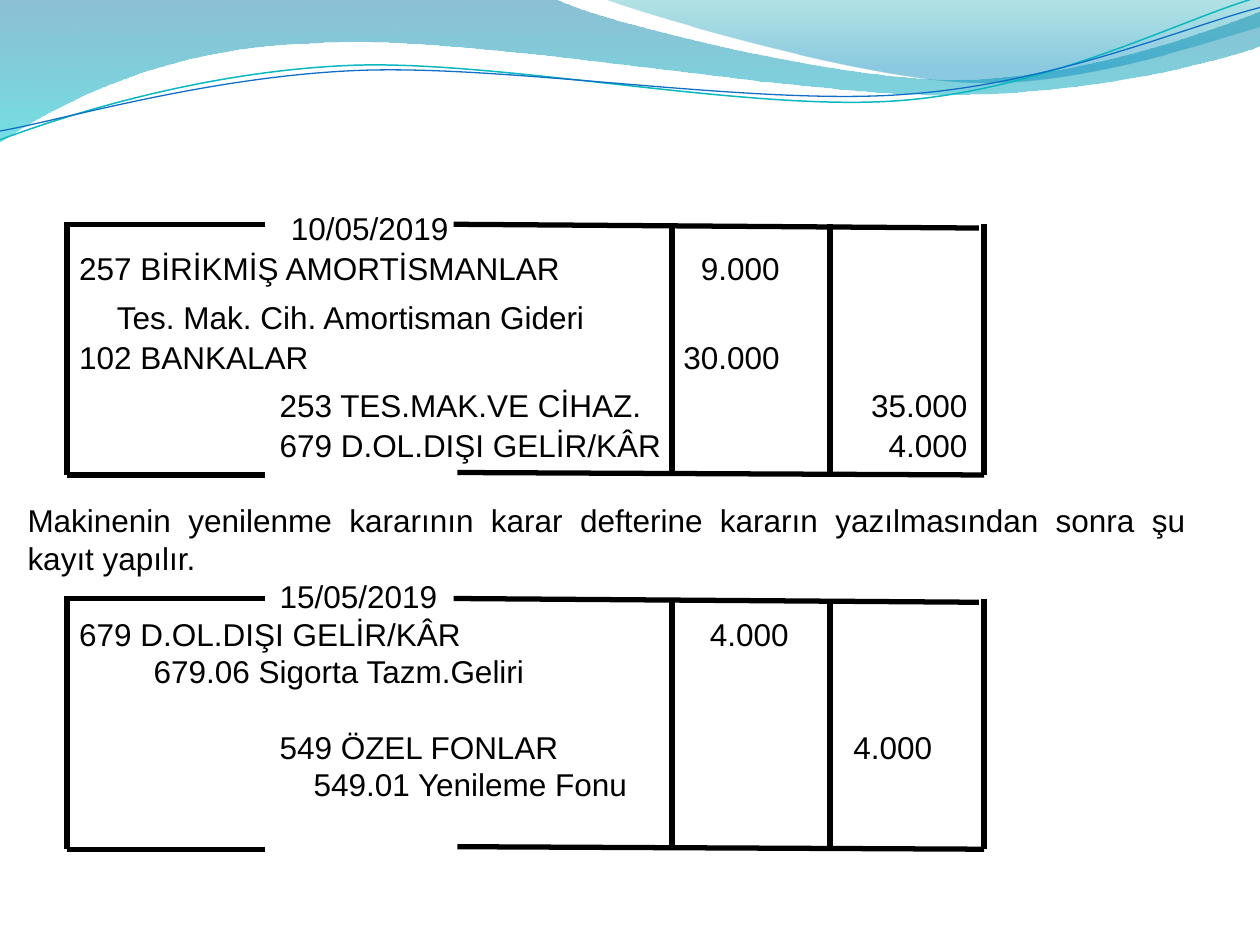
from lxml import etree
from pptx import Presentation
from pptx.dml.color import RGBColor
from pptx.enum.shapes import MSO_CONNECTOR
from pptx.enum.text import MSO_ANCHOR, PP_ALIGN
from pptx.oxml.ns import qn
from pptx.util import Inches, Pt

STRAIGHT = MSO_CONNECTOR.STRAIGHT
TOP = MSO_ANCHOR.TOP
LEFT, JUSTIFY = PP_ALIGN.LEFT, PP_ALIGN.JUSTIFY

BLACK = RGBColor(0x00, 0x00, 0x00)
DEEP_BLUE = RGBColor(0x00, 0x74, 0xA1)
CYAN = RGBColor(0x00, 0xC6, 0xCF)
TEAL = RGBColor(0x00, 0xA1, 0xA9)
SKY = RGBColor(0x00, 0x8B, 0xBF)
AQUA_LINE = RGBColor(0x0A, 0xB8, 0xBF)
BLUE_LINE = RGBColor(0x0F, 0x6F, 0xC6)

BROAD_WAVE = [
    (0, 0), (4.4, -0.01),
    (4.76, 0.17, 6.64, 0.63, 7.58, 0.63), (8.53, 0.63, 9.58, 0.26, 10, 0.09),
    (10.01, 0.36),
    (9.83, 0.44, 8.7, 0.76, 7.46, 0.75), (6.22, 0.75, 3.82, 0.28, 2.57, 0.34),
    (1.29, 0.36, 0.46, 0.83, -0.01, 1.13),
]
RIGHT_WAVE = [
    (4.79, -0.01),
    (5.09, 0.11, 6.82, 0.62, 7.69, 0.65), (8.56, 0.69, 9.61, 0.32, 10, 0.21),
    (10, 0),
]
AQUA_CURVE = [
    (0, 1.11),
    (0.48, 0.93, 1.58, 0.57, 2.77, 0.52), (3.95, 0.47, 5.93, 0.89, 7.13, 0.8),
    (8.33, 0.71, 9.38, 0.15, 9.98, -0.02),
]
BLUE_CURVE = [
    (0, 1.04),
    (0.47, 0.96, 1.64, 0.61, 2.83, 0.56), (4.03, 0.51, 5.97, 0.84, 7.17, 0.75),
    (8.36, 0.67, 9.41, 0.21, 10, 0.06),
]

JOURNAL_TOPS = (1.78, 4.75)
JOURNAL_LINES = [
    (0.51, 0, 2.1, 0, 3), (3.6, 0, 7.77, 0.03, 3),
    (0.53, 1.99, 2.1, 1.99, 3), (3.63, 1.97, 7.81, 1.99, 3),
] + [(x, 0, x, 1.99, 3.5) for x in (5.33, 6.59, 7.81, 0.53)]

ACCOUNT, CREDIT = 0.41, 2.0
ENTRIES = [
    ("10/05/2019", 2.09, None, None, 0),
    ("257 BİRİKMİŞ AMORTİSMANLAR", ACCOUNT, "9.000", 5.97, 1.4),
    ("Tes. Mak. Cih. Amortisman Gideri", 0.71, None, None, 6.5),
    ("102 BANKALAR", ACCOUNT, "30.000", 5.97, 1.4),
    ("253 TES.MAK.VE CİHAZ.", CREDIT, "35.000", 7.46, 6),
    ("679 D.OL.DIŞI GELİR/KÂR", CREDIT, "4.000", 7.46, 1.4),
    ("Makinenin yenilenme kararının karar defterine kararın yazılmasından "
     "sonra şu kayıt yapılır.", 0, None, None, 21.5),
    ("15/05/2019", CREDIT, None, None, 0),
    ("679 D.OL.DIŞI GELİR/KÂR", ACCOUNT, "4.000", 6.04, 0.4),
    ("679.06 Sigorta Tazm.Geliri", 1.0, None, None, 0),
    ("549 ÖZEL FONLAR", CREDIT, "4.000", 7.18, 21.5),
    ("549.01 Yenileme Fonu", 2.27, None, None, 0),
]


def add_outline(slide, segments, close):
    anchors = [(Inches(seg[-2]), Inches(seg[-1])) for seg in segments]
    builder = slide.shapes.build_freeform(*anchors[0])
    builder.add_line_segments(anchors[1:], close=close)
    sp = builder.convert_to_shape()
    sp.shadow.inherit = False
    for step, seg in zip(list(sp.element.iter(qn("a:lnTo"))), segments[1:]):
        if len(seg) == 6:
            step.tag = qn("a:cubicBezTo")
            step.clear()
            for x, y in zip(seg[::2], seg[1::2]):
                etree.SubElement(step, qn("a:pt"), x=str(Inches(x) - sp.left),
                                 y=str(Inches(y) - sp.top))
    return sp


def add_wave(slide, segments, stops):
    sp = add_outline(slide, segments, True)
    sp.line.fill.background()
    sp.fill.gradient()
    sp.fill.gradient_angle = 270
    for stop, (position, color, opacity) in zip(sp.fill.gradient_stops, stops):
        stop.position = position
        stop.color.rgb = color
    for clr, (position, color, opacity) in zip(sp.element.iter(qn("a:srgbClr")), stops):
        etree.SubElement(clr, qn("a:alpha"), val=str(opacity * 1000))


def add_curve(slide, segments, color, width):
    sp = add_outline(slide, segments, False)
    sp.fill.background()
    sp.line.color.rgb = color
    sp.line.width = Pt(width)


def add_line(slide, x1, y1, x2, y2, width):
    line = slide.shapes.add_connector(
        STRAIGHT, Inches(x1), Inches(y1), Inches(x2), Inches(y2))
    line.line.color.rgb = BLACK
    line.line.width = Pt(width)
    etree.SubElement(line.element.spPr, qn("a:effectLst"))


def add_journal(slide, top):
    for x1, y1, x2, y2, width in JOURNAL_LINES:
        add_line(slide, x1, top + y1, x2, top + y2, width)


def write_text(p, text, *, size=18, font="Arial", color=BLACK, align=LEFT,
               before=0, pitch=21.5, tabs=()):
    p.alignment = align
    p.line_spacing = Pt(pitch)
    p.space_before = Pt(before)
    p.space_after = Pt(0)
    if tabs:
        tab_list = etree.SubElement(p._p.get_or_add_pPr(), qn("a:tabLst"))
        for position, side in tabs:
            etree.SubElement(tab_list, qn("a:tab"), pos=str(Inches(position)), algn=side)
    r = p.add_run()
    r.text = text
    r.font.size = Pt(size)
    r.font.name = font
    r.font.color.rgb = color


def add_entries(slide):
    box = slide.shapes.add_textbox(Inches(0.12), Inches(1.23), Inches(9.39), Inches(5.25))
    tf = box.text_frame
    tf.word_wrap = True
    tf.vertical_anchor = TOP
    tf.margin_top = Inches(0.43)
    for i, (name, indent, amount, edge, before) in enumerate(ENTRIES):
        p = tf.add_paragraph() if i else tf.paragraphs[0]
        tabs = [(indent, "l")] if indent else []
        text = "\t" + name if indent else name
        if amount:
            tabs.append((edge, "r"))
            text += "\t" + amount
        write_text(p, text, align=LEFT if indent else JUSTIFY, before=before, tabs=tabs)


def main():
    prs = Presentation()
    prs.slide_width, prs.slide_height = Inches(10), Inches(7.5)
    slide = prs.slides.add_slide(prs.slide_layouts[6])
    add_wave(slide, BROAD_WAVE, [(0, DEEP_BLUE, 45), (1, CYAN, 55)])
    add_wave(slide, RIGHT_WAVE, [(0, TEAL, 30), (0.8, SKY, 45)])
    add_curve(slide, AQUA_CURVE, AQUA_LINE, 0.85)
    add_curve(slide, BLUE_CURVE, BLUE_LINE, 0.75)
    add_entries(slide)
    for top in JOURNAL_TOPS:
        add_journal(slide, top)
    prs.save("out.pptx")


if __name__ == "__main__":
    main()
